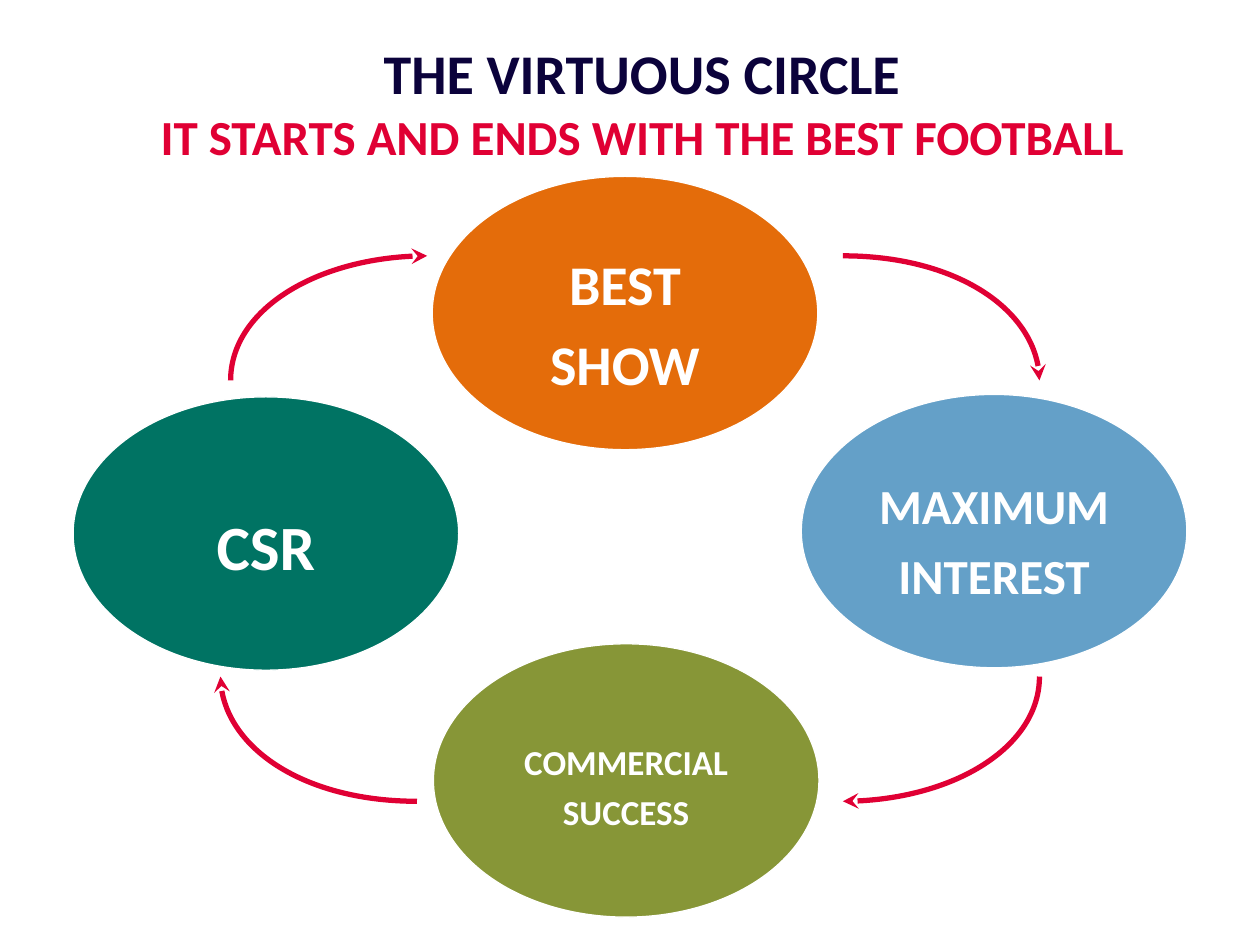
from dataclasses import dataclass

import pptx
import pptx.dml.color
import pptx.enum.shapes
import pptx.enum.text
import pptx.oxml.ns
import pptx.util
from lxml import etree

Pt = pptx.util.Pt
FONT = "Calibri"
WHITE, NAVY, RED = "FFFFFF", "0B023B", "E00034"
OVAL_W, OVAL_H = 220.3, 156.2
INSET = 3.6
BEZIER = 0.55  # control point ratio for a quarter ellipse


@dataclass
class Stage:
    text: str
    left: float
    top: float
    fill: str
    size: float


@dataclass
class Arc:
    start: tuple[float, float]
    end: tuple[float, float]
    starts_level: bool


STAGES = [
    Stage("BEST SHOW", 247, 100.8, "E46C0A", 32),
    Stage("COMMERCIAL SUCCESS", 247.7, 367.9, "879637", 20),
    Stage("MAXIMUM INTEREST", 457.9, 225.4, "64A0C8", 28),
    Stage("CSR", 41.8, 226.8, "007363", 36),
]
ARCS = [
    Arc((481.7, 146.2), (594, 217.4), True),
    Arc((594, 386.6), (481.7, 457.9), False),
    Arc((238.3, 457.9), (126, 386.6), True),
    Arc((131.8, 217.4), (244.1, 146.2), False),
]


def paint(fmt, color: str) -> None:
    """Give a fill format a solid colour."""
    fmt.solid()
    fmt.fore_color.rgb = pptx.dml.color.RGBColor.from_string(color)


def add_text(p, text: str, *, size: float, color: str, bold: bool = True) -> None:
    p.alignment = pptx.enum.text.PP_ALIGN.CENTER
    r = p.add_run()
    r.text = text
    r.font.name, r.font.size, r.font.bold = FONT, Pt(size), bold
    paint(r.font.fill, color)


def add_title(s) -> None:
    sp = s.shapes.add_textbox(Pt(25.2), Pt(21.6), Pt(683.3), Pt(73.4))
    tf = sp.text_frame
    tf.word_wrap = True
    tf.vertical_anchor = pptx.enum.text.MSO_ANCHOR.MIDDLE
    p = tf.paragraphs[0]
    add_text(p, "THE VIRTUOUS CIRCLE", size=32, color=NAVY)
    p.add_line_break()
    add_text(p, "IT STARTS AND ENDS WITH THE BEST FOOTBALL", size=28, color=RED)


def add_stage(s, stage: Stage) -> None:
    sp = s.shapes.add_shape(pptx.enum.shapes.MSO_SHAPE.OVAL, Pt(stage.left),
                            Pt(stage.top), Pt(OVAL_W), Pt(OVAL_H))
    sp.shadow.inherit = False
    paint(sp.fill, stage.fill)
    paint(sp.line.fill, WHITE)
    sp.line.width = Pt(0.75)
    tf = sp.text_frame
    tf.word_wrap = True
    tf.vertical_anchor = pptx.enum.text.MSO_ANCHOR.MIDDLE
    tf.margin_top, tf.margin_bottom = Pt(INSET + 0.12 * stage.size), Pt(INSET)
    p = tf.paragraphs[0]
    p.line_spacing = 1.2
    add_text(p, stage.text, size=stage.size, color=WHITE)


def add_arc(s, arc: Arc) -> None:
    """Draw a quarter ellipse with an arrowhead at its end."""
    (x1, y1), (x2, y2) = arc.start, arc.end
    dx, dy = BEZIER * (x2 - x1), BEZIER * (y2 - y1)
    if arc.starts_level:
        controls = [(x1 + dx, y1), (x2, y2 - dy)]
    else:
        controls = [(x1, y1 + dy), (x2 - dx, y2)]
    builder = s.shapes.build_freeform(Pt(x1), Pt(y1))
    builder.add_line_segments(
        [(Pt(x), Pt(y)) for x, y in controls + [arc.end]], close=False)
    sp = builder.convert_to_shape()
    sp.shadow.inherit = False
    sp.fill.background()
    paint(sp.line.fill, RED)
    sp.line.width = Pt(3)

    # Turn the three segments into one cubic curve.
    qn = pptx.oxml.ns.qn
    outline = sp.element.find(".//" + qn("a:path"))
    curve = etree.SubElement(outline, qn("a:cubicBezTo"))
    for segment in outline.findall(qn("a:lnTo")):
        curve.append(segment[0])
        outline.remove(segment)
    etree.SubElement(sp.line._get_or_add_ln(), qn("a:tailEnd"), type="stealth")


def main() -> None:
    prs = pptx.Presentation()
    prs.slide_width, prs.slide_height = Pt(720), Pt(540)
    s = prs.slides.add_slide(prs.slide_layouts[6])
    for stage in STAGES:
        add_stage(s, stage)
    for arc in ARCS:
        add_arc(s, arc)
    add_title(s)
    prs.save("out.pptx")


if __name__ == "__main__":
    main()
